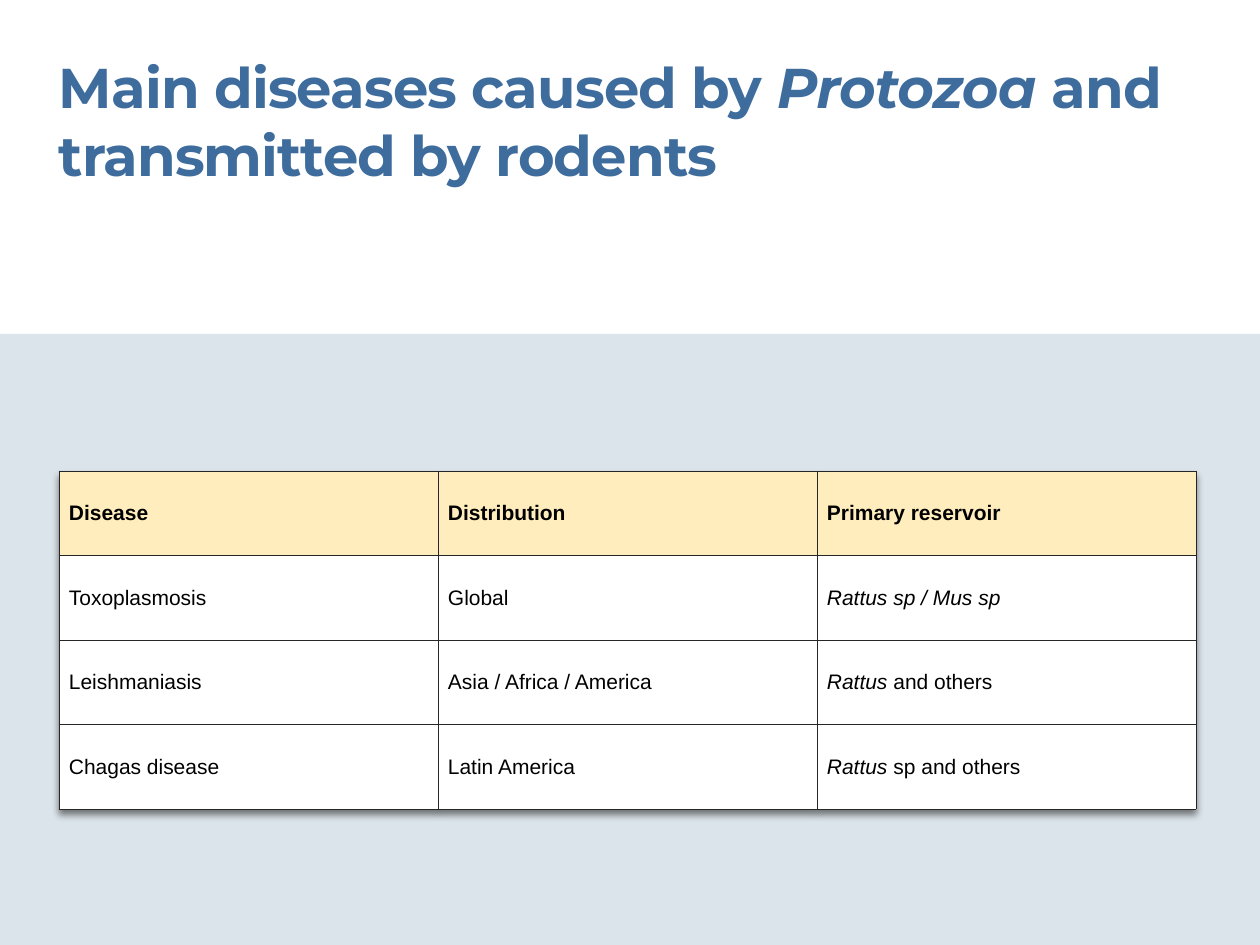
"""Build a slide with a table of protozoan diseases transmitted by rodents."""
from lxml import etree
from pptx import Presentation
from pptx.dml.color import RGBColor
from pptx.enum.shapes import MSO_SHAPE
from pptx.enum.text import MSO_ANCHOR, MSO_AUTO_SIZE, PP_ALIGN
from pptx.oxml import parse_xml
from pptx.oxml.ns import nsdecls, qn
from pptx.util import Emu, Pt

SCALE = 914400 / 126
LEFT, WIDTH = 59, 1137
ROWS = [
    [[("Disease", False)], [("Distribution", False)], [("Primary reservoir", False)]],
    [[("Toxoplasmosis", False)], [("Global", False)], [("Rattus sp / Mus sp", True)]],
    [[("Leishmaniasis", False)], [("Asia / Africa / America", False)],
     [("Rattus", True), (" and others", False)]],
    [[("Chagas disease", False)], [("Latin America", False)],
     [("Rattus", True), (" sp and others", False)]],
]
TITLE = [("Main diseases caused by ", False), ("Protozoa", True),
         (" and transmitted by rodents", False)]


def px(*lengths):
    return [Emu(round(length * SCALE)) for length in lengths]


def write(paragraph, runs, font_name, size, color, bold):
    font = paragraph.font
    font.name, font.size, font.bold = font_name, Pt(size), bold
    font.color.rgb = RGBColor.from_string(color)
    for text, italic in runs:
        run = paragraph.add_run()
        run.text = text
        run.font.italic = italic


presentation = Presentation()
presentation.slide_width, presentation.slide_height = px(1260, 945)
slide = presentation.slides.add_slide(presentation.slide_layouts[5])

title = slide.shapes.title
title.left, title.top, title.width, title.height = px(LEFT, 53, WIDTH, 136)
frame = title.text_frame
frame.margin_left = frame.margin_top = frame.margin_right = frame.margin_bottom = 0
frame.vertical_anchor = MSO_ANCHOR.TOP
frame.auto_size = MSO_AUTO_SIZE.SHAPE_TO_FIT_TEXT
frame.word_wrap = True
frame.paragraphs[0].alignment = PP_ALIGN.LEFT
write(frame.paragraphs[0], TITLE, "Montserrat", 32, "3D6C9D", True)
for properties in title.element.iter(qn("a:rPr")):
    properties.set("spc", "-50")

band = slide.shapes.add_shape(MSO_SHAPE.RECTANGLE, *px(0, 334, 1260, 611))
band.shadow.inherit = False
band.fill.solid()
band.fill.fore_color.rgb = RGBColor.from_string("DBE4EA")
band.line.fill.background()
title.element.addprevious(band.element)

table_frame = slide.shapes.add_table(len(ROWS), len(ROWS[0]), *px(LEFT, 471, WIDTH, 338))
table = table_frame.table
table.horz_banding = False
table_properties = next(table_frame.element.iter(qn("a:tblPr")))
table_properties.insert(0, parse_xml(
    f'<a:effectLst {nsdecls("a")}><a:outerShdw blurRad="50800" dist="38100" dir="5400000">'
    '<a:srgbClr val="000000"><a:alpha val="50000"/></a:srgbClr></a:outerShdw></a:effectLst>'))

for row_index, row in enumerate(ROWS):
    for column_index, runs in enumerate(row):
        header = row_index == 0
        cell = table.cell(row_index, column_index)
        cell.vertical_anchor = MSO_ANCHOR.MIDDLE
        cell.margin_left, cell.margin_right = px(10, 10)
        cell.margin_top, cell.margin_bottom = px(6, 6)
        write(cell.text_frame.paragraphs[0], runs, "Arial", 12, "000000", header)
        cell.fill.solid()
        cell.fill.fore_color.rgb = RGBColor.from_string("FFEDBD" if header else "FFFFFF")
        cell_properties = next(table.cell(row_index, column_index).text_frame._element.itersiblings())
        for position, side in enumerate(("lnL", "lnR", "lnT", "lnB")):
            border = etree.Element(qn(f"a:{side}"), w=str(Pt(0.5)))
            fill = etree.SubElement(border, qn("a:solidFill"))
            etree.SubElement(fill, qn("a:srgbClr"), val="262626")
            cell_properties.insert(position, border)

presentation.save("out.pptx")
